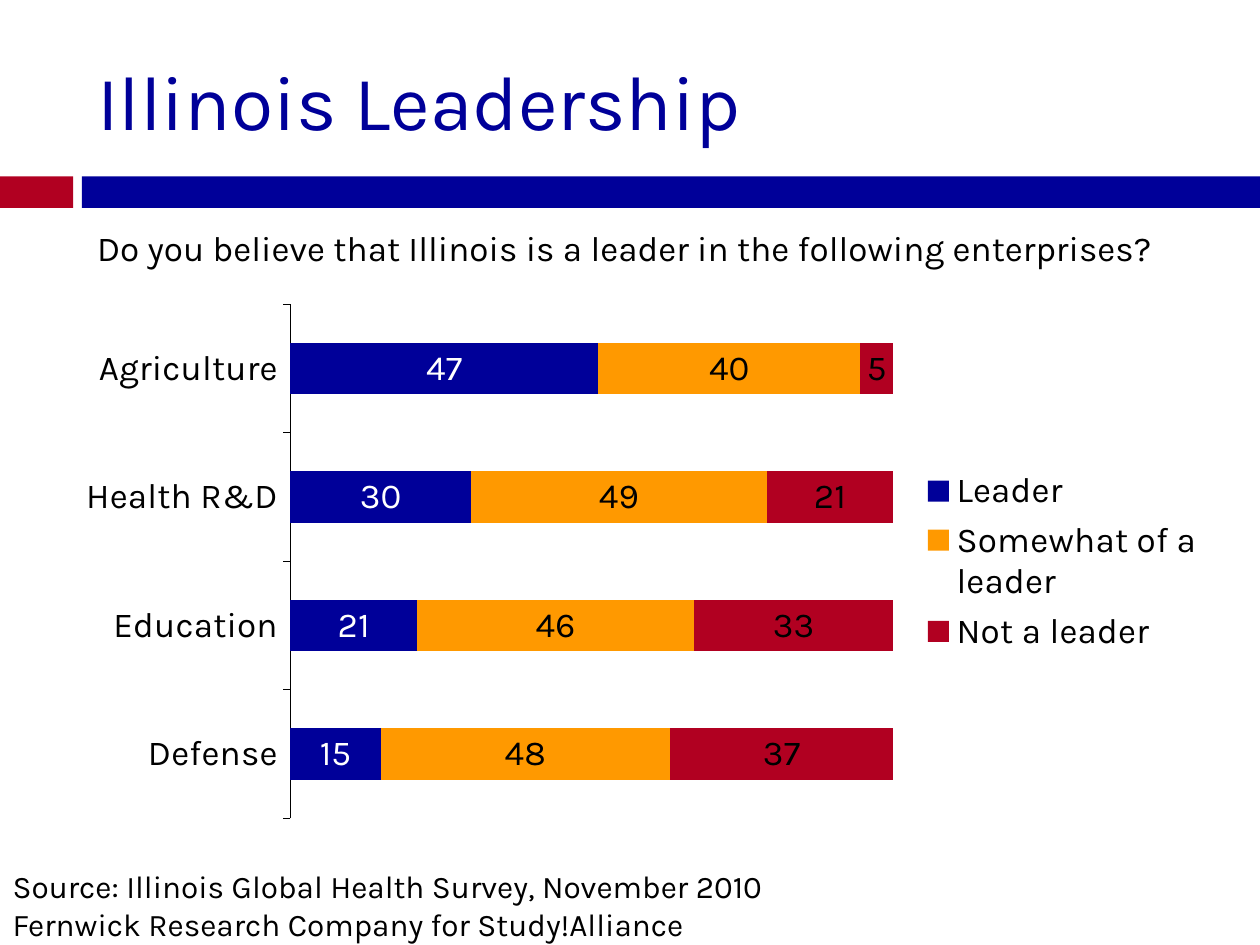
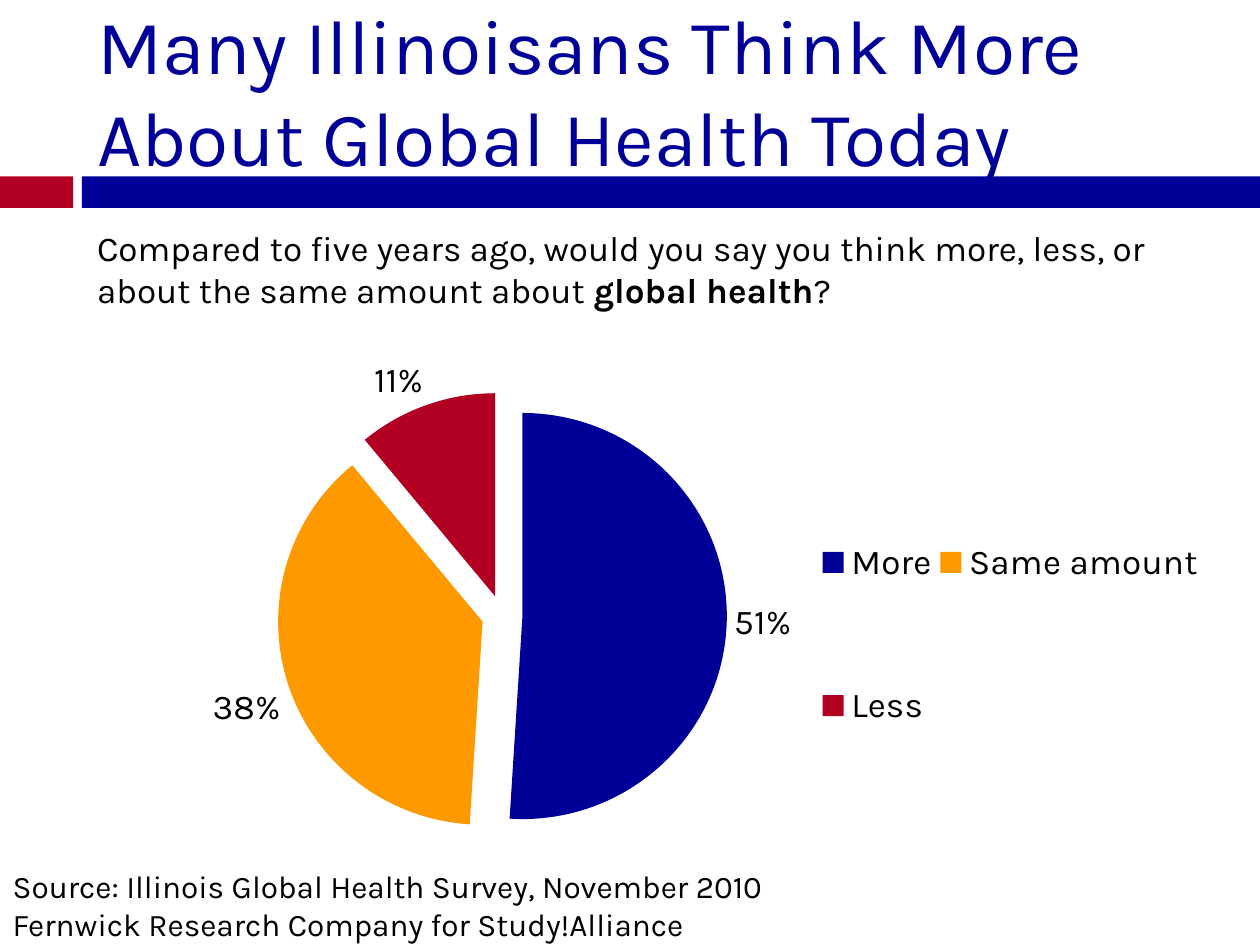
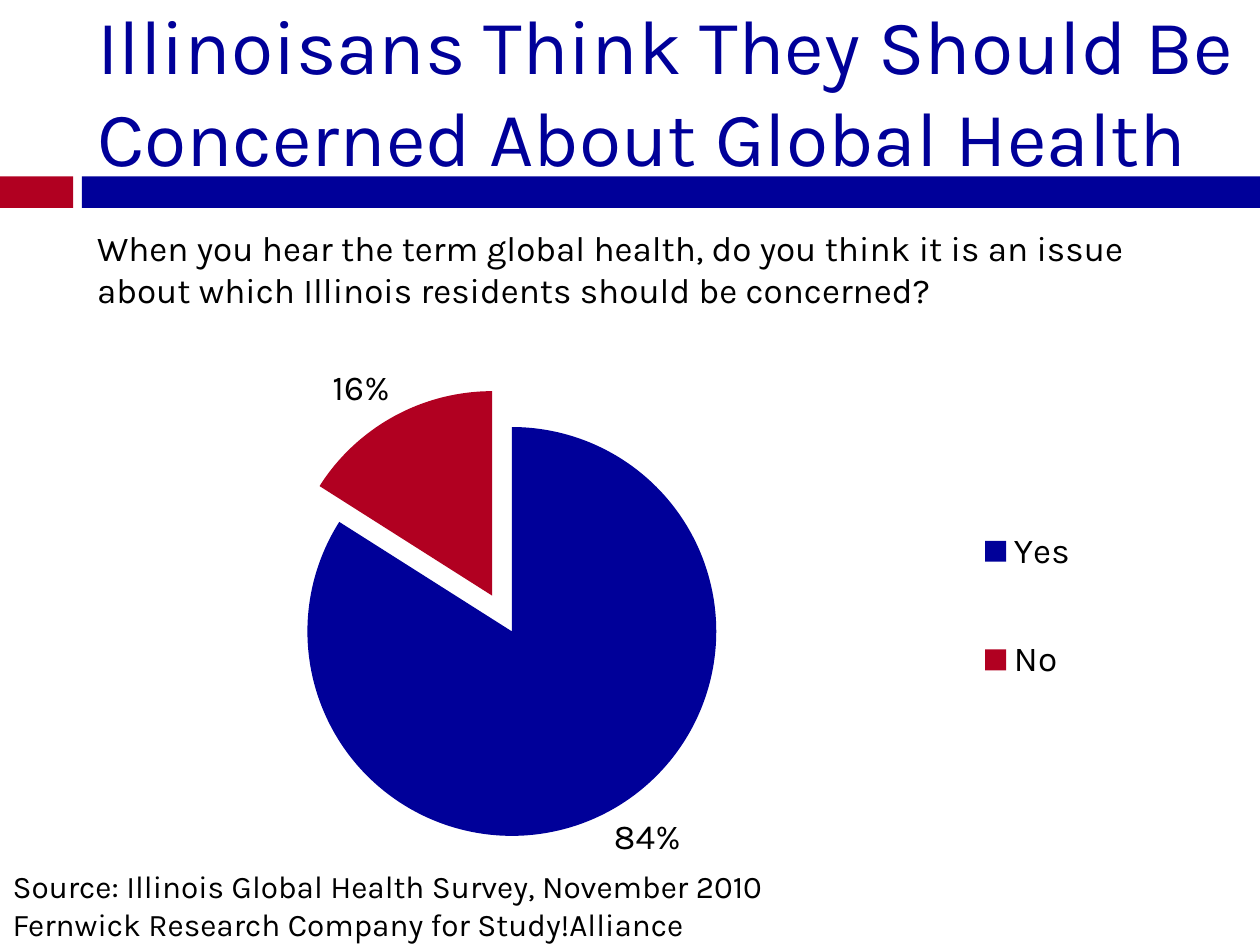
from dataclasses import dataclass

from lxml import etree
from pptx import Presentation
from pptx import util as u
from pptx.chart.data import CategoryChartData
from pptx.dml.color import RGBColor
from pptx.enum import chart as charts, shapes, text
from pptx.oxml.ns import qn


@dataclass(frozen=True)
class Theme:
    blue: RGBColor = RGBColor.from_string("000099")
    orange: RGBColor = RGBColor.from_string("FF9900")
    red: RGBColor = RGBColor.from_string("B10021")
    black: RGBColor = RGBColor.from_string("000000")
    white: RGBColor = RGBColor.from_string("FFFFFF")
    face: str = "Karla"
    title: int = 44
    body: int = 20
    source: int = 18


theme = Theme()


def write(box, at, spans, size, color, anchor, joint=None):
    """Place a placeholder and fill it with one unbulleted paragraph of (text, bold) spans."""
    box.left, box.top, box.width, box.height = map(u.Inches, at)
    frame = box.text_frame
    settings = {"word_wrap": True, "auto_size": text.MSO_AUTO_SIZE.NONE, "vertical_anchor": anchor}
    for name, value in settings.items():
        setattr(frame, name, value)
    para = frame.paragraphs[0]
    props = para._p.get_or_add_pPr()
    props.set("marL", "0")
    props.set("indent", "0")
    etree.SubElement(props, qn("a:buNone"))
    para.alignment = text.PP_ALIGN.LEFT
    para.space_before = u.Pt(0)
    for number, (words, bold) in enumerate(spans):
        if number and joint == "break":
            para.add_line_break()
        span = para.add_run()
        span.text = words
        style(span.font, size, color, bold)


def style(font, size, color, bold=False):
    for name, value in {"name": theme.face, "size": u.Pt(size), "bold": bold}.items():
        setattr(font, name, value)
    font.color.rgb = color


source_lines = [
    ("Source: Illinois Global Health Survey, November 2010", False),
    ("Fernwick Research Company for Study!Alliance", False),
]
leader_series = [
    ("Leader", (15, 21, 30, 47), theme.blue, theme.white),
    ("Somewhat of a leader", (48, 46, 49, 40), theme.orange, theme.black),
    ("Not a leader", (37, 33, 21, 5), theme.red, theme.black),
]
surveys = [
    {
        "title": "Illinois Leadership", "title_at": (0.67, 0.25, 9.33, 1.08),
        "question": [("Do you believe that Illinois is a leader in the following enterprises?", False)],
        "categories": ("Defense", "Education", "Health R&D", "Agriculture"),
        "chart_top": 2.33,
    },
    {
        "title": "Many Illinoisans Think More About Global Health Today",
        "title_at": (0.67, 0.17, 8.92, 1.08),
        "question": [
            ("Compared to five years ago, would you say you think more, less, or "
             "about the same amount about ", False),
            ("global health", True), ("?", False),
        ],
        "categories": ("More", "Same amount", "Less"),
        "chart_top": 2.83,
        "shares": (51, 38, 11), "colors": (theme.blue, theme.orange, theme.red),
        "legend_at": (0.65, 0.15, 0.34, 0.73),
    },
    {
        "title": "Illinoisans Think They Should Be Concerned About Global Health",
        "title_at": (0.67, 0.17, 9.33, 1.08),
        "question": [("When you hear the term global health, do you think it is an issue "
                      "about which Illinois residents should be concerned?", False)],
        "categories": ("Yes", "No"),
        "chart_top": 2.83,
        "shares": (84, 16), "colors": (theme.blue, theme.red),
        "legend_at": (0.77, 0.2, 0.13, 0.53),
    },
]

deck = Presentation()
deck.slide_width, deck.slide_height = u.Inches(10), u.Inches(7.5)
layout = deck.slide_layouts.get_by_name("Two Content")
pages = [deck.slides.add_slide(layout) for survey in surveys]

# The two bands live on the master, so every page shows them.
for left, width, color in ((0, 0.58, theme.red), (0.65, 9.35, theme.blue)):
    band = pages[0].shapes.add_shape(
        shapes.MSO_SHAPE.RECTANGLE, *map(u.Inches, (left, 1.4, width, 0.25)))
    band.shadow.inherit = False
    band.fill.solid()
    band.fill.fore_color.rgb = color
    band.line.fill.background()
    deck.slide_master.shapes._spTree.append(band._element)

for page, survey in zip(pages, surveys):
    title, question, source = page.placeholders
    write(title, survey["title_at"], [(survey["title"], False)],
          theme.title, theme.blue, text.MSO_ANCHOR.MIDDLE)
    write(question, (0.67, 1.75, 8.92, 0.92), survey["question"],
          theme.body, theme.black, text.MSO_ANCHOR.TOP)
    write(source, (0, 6.83, 7.75, 0.67), source_lines,
          theme.source, theme.black, text.MSO_ANCHOR.TOP, joint="break")

    is_pie = "shares" in survey
    data = CategoryChartData()
    data.categories = survey["categories"]
    if is_pie:
        data.add_series("Series 1", survey["shares"])
        kind = charts.XL_CHART_TYPE.PIE
    else:
        for name, values, _, _ in leader_series:
            data.add_series(name, values)
        kind = charts.XL_CHART_TYPE.BAR_STACKED_100
    area = map(u.Inches, (0.5, survey["chart_top"], 9.17, 4.25))
    chart = page.shapes.add_chart(kind, *area, data).chart
    chart.has_title = False
    style(chart.font, theme.body, theme.black)
    chart.has_legend = True
    chart.legend.position = charts.XL_LEGEND_POSITION.RIGHT
    chart.legend.include_in_layout = False
    style(chart.legend.font, theme.body, theme.black)
    plot = chart.plots[0]
    plot.vary_by_categories = is_pie

    if is_pie:
        series = plot.series[0]
        explosion = etree.Element(qn("c:explosion"), val="10")
        series._element.find(qn("c:cat")).addprevious(explosion)
        for number, color in enumerate(survey["colors"]):
            fill = series.points[number].format.fill
            fill.solid()
            fill.fore_color.rgb = color
        labels = series.data_labels
        label_format = {
            "show_percentage": True, "show_value": False, "number_format": "0%",
            "number_format_is_linked": False,
            "position": charts.XL_LABEL_POSITION.OUTSIDE_END,
        }
        for name, value in label_format.items():
            setattr(labels, name, value)
        style(labels.font, theme.body, theme.black)

        plot_area = chart._chartSpace.chart.plotArea
        placements = ((plot_area, 0, (0, 0.06, 0.76, 0.84)),
                      (chart.legend._element, 1, survey["legend_at"]))
        for parent, index, shares in placements:
            for old in parent.findall(qn("c:layout")):
                parent.remove(old)
            place = etree.Element(qn("c:layout"))
            manual = etree.SubElement(place, qn("c:manualLayout"))
            if parent is plot_area:
                etree.SubElement(manual, qn("c:layoutTarget"), val="inner")
            for side in "xy":
                etree.SubElement(manual, qn(f"c:{side}Mode"), val="edge")
            for side, share in zip("xywh", shares):
                etree.SubElement(manual, qn(f"c:{side}"), val=str(share))
            parent.insert(index, place)
    else:
        plot.gap_width, plot.overlap = 150, 100
        for series, (_, _, color, label_color) in zip(plot.series, leader_series):
            series.format.fill.solid()
            series.format.fill.fore_color.rgb = color
            series.data_labels.show_value = True
            style(series.data_labels.font, theme.body, label_color)
        chart.value_axis.visible = False
        chart.value_axis.has_major_gridlines = False
        axis = chart.category_axis
        axis.major_tick_mark = charts.XL_TICK_MARK.OUTSIDE
        axis.format.line.color.rgb = theme.black
        axis.format.line.width = u.Pt(0.75)
        style(axis.tick_labels.font, theme.body, theme.black)

deck.save("out.pptx")
